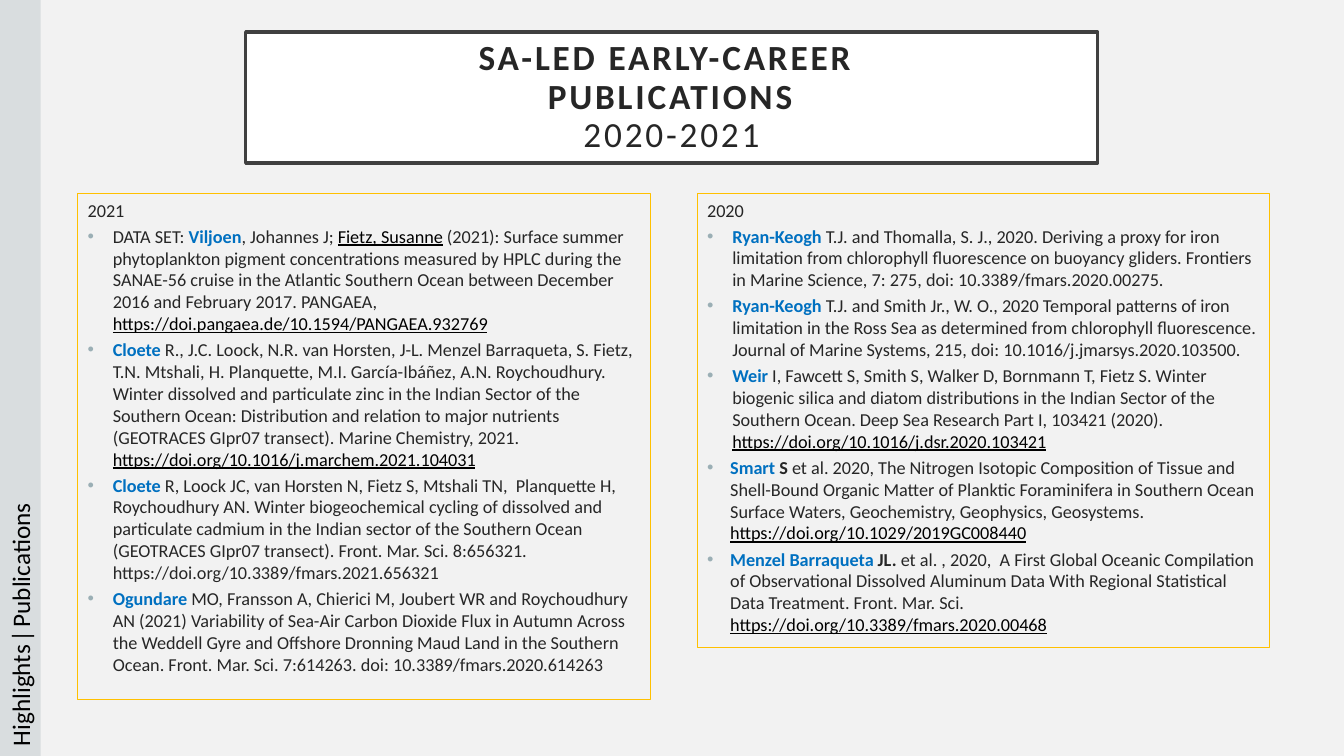
import pptx
import pptx.util
import pptx.dml.color
import pptx.enum.text
import pptx.enum.shapes
import lxml.etree

Pt = pptx.util.Pt
PP_ALIGN = pptx.enum.text.PP_ALIGN
ANCHOR = pptx.enum.text.MSO_ANCHOR
AUTO_SIZE = pptx.enum.text.MSO_AUTO_SIZE

COLORS = {
    "background": "F2F2F2", "white": "FFFFFF", "frame": "404040", "text": "262626",
    "author": "0070C0", "link": "000000", "bullet": "9BAFB5", "border": "FFC000",
    "sidebar": "D9DDDF",
}

# Publications: (year, left, height, entries); an entry is (indent, runs of (style, text))
COLUMNS = [
    ("2021", 55.5, 361, [
        (18, [("text", "DATA SET: "), ("author", "Viljoen"), ("text", ", Johannes J; "),
              ("link", "Fietz, Susanne"),
              ("text", " (2021): Surface summer phytoplankton pigment concentrations measured by "
                       "HPLC during the SANAE-56 cruise in the Atlantic Southern Ocean between "
                       "December 2016 and February 2017. PANGAEA, "),
              ("link", "https://doi.pangaea.de/10.1594/PANGAEA.932769")]),
        (18, [("author", "Cloete"),
              ("text", " R., J.C. Loock, N.R. van Horsten, J-L. Menzel Barraqueta, S. Fietz, "
                       "T.N. Mtshali, H. Planquette, M.I. García-Ibáñez, A.N. Roychoudhury. "
                       "Winter dissolved and particulate zinc in the Indian Sector of the Southern "
                       "Ocean: Distribution and relation to major nutrients (GEOTRACES GIpr07 "
                       "transect). Marine Chemistry, 2021. "),
              ("link", "https://doi.org/10.1016/j.marchem.2021.104031")]),
        (18, [("author", "Cloete"),
              ("text", " R, Loock JC, van Horsten N, Fietz S, Mtshali TN,  Planquette H, "
                       "Roychoudhury AN. Winter biogeochemical cycling of dissolved and particulate "
                       "cadmium in the Indian sector of the Southern Ocean (GEOTRACES GIpr07 "
                       "transect). Front. Mar. Sci. 8:656321. "
                       "https://doi.org/10.3389/fmars.2021.656321")]),
        (18, [("author", "Ogundare "),
              ("text", "MO, Fransson A, Chierici M, Joubert WR and Roychoudhury AN (2021) "
                       "Variability of Sea-Air Carbon Dioxide Flux in Autumn Across the Weddell "
                       "Gyre and Offshore Dronning Maud Land in the Southern Ocean. Front. Mar. "
                       "Sci. 7:614263. doi: 10.3389/fmars.2020.614263")]),
    ]),
    ("2020", 498, 324, [
        (18, [("author", "Ryan-Keogh"),
              ("text", " T.J. and Thomalla, S. J., 2020. Deriving a proxy for iron limitation from "
                       "chlorophyll fluorescence on buoyancy gliders. Frontiers in Marine Science, "
                       "7: 275, doi: 10.3389/fmars.2020.00275.")]),
        (18, [("author", "Ryan-Keogh"),
              ("text", " T.J. and Smith Jr., W. O., 2020 Temporal patterns of iron limitation in "
                       "the Ross Sea as determined from chlorophyll fluorescence. Journal of Marine "
                       "Systems, 215, doi: 10.1016/j.jmarsys.2020.103500.")]),
        (18, [("author", "Weir"),
              ("text", " I, Fawcett S, Smith S, Walker D, Bornmann T, Fietz S. Winter biogenic "
                       "silica and diatom distributions in the Indian Sector of the Southern Ocean. "
                       "Deep Sea Research Part I, 103421 (2020). "),
              ("link", "https://doi.org/10.1016/j.dsr.2020.103421")]),
        (16.5, [("author", "Smart"), ("bold", " S "),
                ("text", "et al. 2020, The Nitrogen Isotopic Composition of Tissue and Shell-Bound "
                         "Organic Matter of Planktic Foraminifera in Southern Ocean Surface Waters, "
                         "Geochemistry, Geophysics, Geosystems. "),
                ("link", "https://doi.org/10.1029/2019GC008440")]),
        (16.5, [("author", "Menzel Barraqueta "), ("bold", "JL. "),
                ("text", "et al. , 2020,  A First Global Oceanic Compilation of Observational "
                         "Dissolved Aluminum Data With Regional Statistical Data Treatment. "
                         "Front. Mar. Sci. "),
                ("link", "https://doi.org/10.3389/fmars.2020.00468")]),
    ]),
]


def rgb(name):
    return pptx.dml.color.RGBColor.from_string(COLORS[name])


def add_run(p, text, style="text", size=13):
    r = p.add_run()
    r.text = text
    r.font.name = "Calibri"
    r.font.size = Pt(size)
    r.font.bold = style in ("author", "bold")
    r.font.underline = style == "link"
    r.font.color.rgb = rgb("text" if style == "bold" else style)
    return r


prs = pptx.Presentation()
prs.slide_width, prs.slide_height = Pt(960), Pt(540)
s = prs.slides.add_slide(prs.slide_layouts[5])
s.background.fill.solid()
s.background.fill.fore_color.rgb = rgb("background")

# Framed title
sp = s.shapes.title
sp.left, sp.top, sp.width, sp.height = Pt(175.5), Pt(23), Pt(608.5), Pt(93.5)
sp.fill.solid()
sp.fill.fore_color.rgb = rgb("white")
sp.line.color.rgb = rgb("frame")
sp.line.width = Pt(2.5)
tf = sp.text_frame
tf.auto_size = AUTO_SIZE.NONE
tf.word_wrap = True
tf.vertical_anchor = ANCHOR.MIDDLE
tf.margin_left = tf.margin_right = tf.margin_top = tf.margin_bottom = Pt(14.4)
p = tf.paragraphs[0]
p.alignment = PP_ALIGN.CENTER
p.line_spacing = 0.9
for text, style in [("SA-LED EARLY-CAREER ", "bold"), ("PUBLICATIONS", "bold"),
                    ("2020-2021", "text")]:
    if p.runs:
        p.add_line_break()
    r = add_run(p, text, style, 25.2)
    r.font._element.set("spc", "200")

# Publication columns
for year, left, height, entries in COLUMNS:
    sp = s.shapes.add_textbox(Pt(left), Pt(138.5), Pt(409), Pt(height))
    sp.line.color.rgb = rgb("border")
    sp.line.width = Pt(0.75)
    tf = sp.text_frame
    tf.word_wrap = True
    p = tf.paragraphs[0]
    p.space_after = Pt(3)
    add_run(p, year)
    for indent, runs in entries:
        p = tf.add_paragraph()
        pPr = p._p.get_or_add_pPr()
        pPr.set("marL", str(Pt(indent)))
        pPr.set("indent", str(-Pt(indent)))
        for tag, child, attr, value in [("buClr", "srgbClr", "val", COLORS["bullet"]),
                                        ("buFont", None, "typeface", "Arial"),
                                        ("buChar", None, "char", "•")]:
            el = lxml.etree.SubElement(pPr, pptx.oxml.ns.qn("a:" + tag))
            if child:
                el = lxml.etree.SubElement(el, pptx.oxml.ns.qn("a:" + child))
            el.set(attr, value)
        p.space_after = Pt(3)
        for style, text in runs:
            add_run(p, text, style)

# Rotated sidebar label
sp = s.shapes.add_shape(pptx.enum.shapes.MSO_SHAPE.RECTANGLE,
                        Pt(-255.5), Pt(255.5), Pt(540), Pt(29))
sp.rotation = 270
sp.shadow.inherit = False
sp.fill.solid()
sp.fill.fore_color.rgb = rgb("sidebar")
sp.line.fill.background()
tf = sp.text_frame
tf.word_wrap = True
tf.auto_size = AUTO_SIZE.SHAPE_TO_FIT_TEXT
tf.vertical_anchor = ANCHOR.TOP
p = tf.paragraphs[0]
p.alignment = PP_ALIGN.LEFT
add_run(p, "Highlights ǀ Publications", "link", 18).font.underline = False

prs.save("out.pptx")
